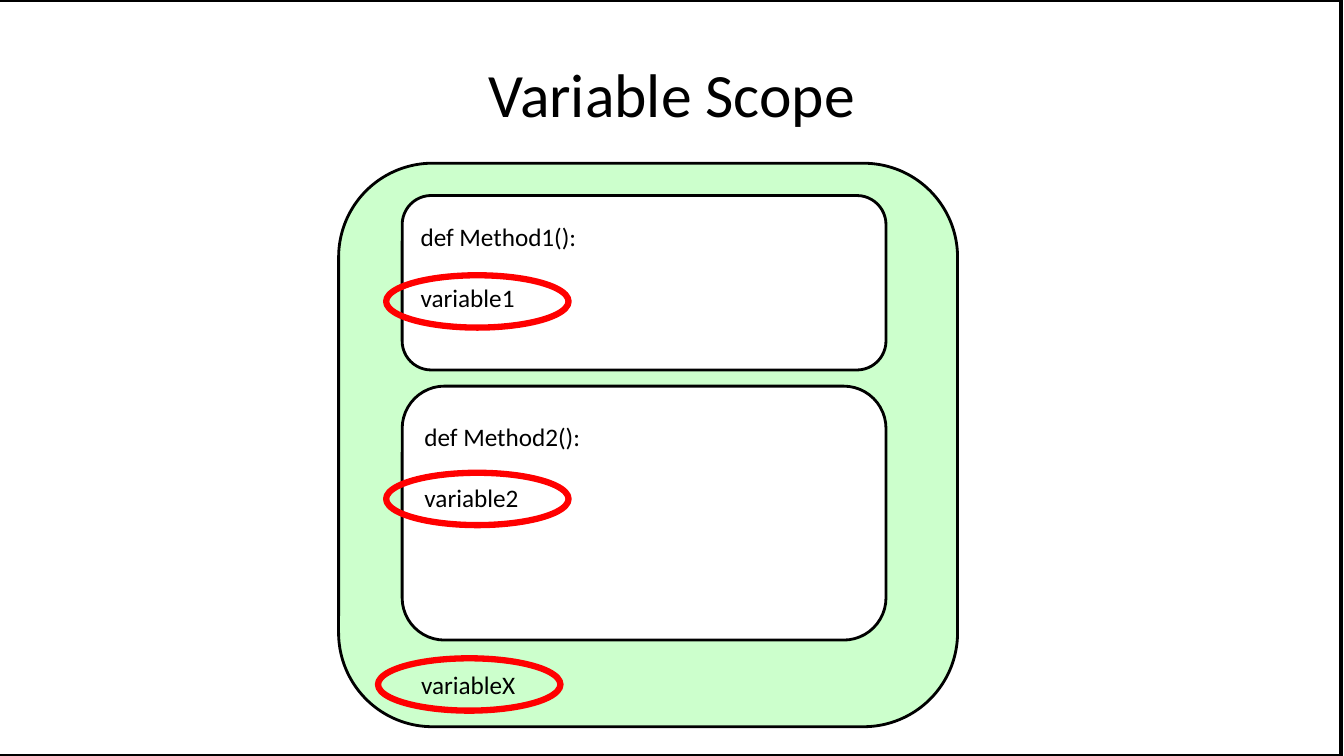
from pptx import Presentation
from pptx.dml.color import RGBColor
from pptx.enum.shapes import MSO_SHAPE
from pptx.enum.text import MSO_ANCHOR, PP_ALIGN
from pptx.util import Pt

RECT = MSO_SHAPE.RECTANGLE
ROUND = MSO_SHAPE.ROUNDED_RECTANGLE
OVAL = MSO_SHAPE.OVAL
TOP, MID, BOTTOM = MSO_ANCHOR.TOP, MSO_ANCHOR.MIDDLE, MSO_ANCHOR.BOTTOM
LEFT, CENTER = PP_ALIGN.LEFT, PP_ALIGN.CENTER
BLACK = RGBColor(0, 0, 0)
WHITE = RGBColor(255, 255, 255)
GREEN = RGBColor(204, 255, 204)
RED = RGBColor(255, 0, 0)


class Deck:
    """Holds the style and the current slide."""

    font = "Calibri"
    size = 18

    def __init__(self, wide, high):
        self.show = Presentation()
        self.show.slide_width, self.show.slide_height = Pt(wide), Pt(high)
        self.slide = self.show.slides.add_slide(self.show.slide_layouts[5])

    def style(self, item, values):
        for name, value in values.items():
            setattr(item, name, value)

    def label(self, shape, lines, size, align, frame):
        text = shape.text_frame
        text.text = "\n".join(lines)
        self.style(text, {"word_wrap": True, **frame})
        for par in text.paragraphs:
            par.alignment = align
            self.style(par.font, {"name": self.font, "size": Pt(size)})
            par.font.color.rgb = BLACK
        return text

    def title(self, words, box):
        shape = self.slide.shapes.title
        spots = map(Pt, box)
        self.style(shape, dict(zip(("left", "top", "width", "height"), spots)))
        self.label(shape, [words], 44, CENTER, {"vertical_anchor": MID})

    def shape(self, kind, box, line, width, fill=None):
        shape = self.slide.shapes.add_shape(kind, *map(Pt, box))
        shape.shadow.inherit = False
        if fill is None:
            shape.fill.background()
        else:
            shape.fill.solid()
            shape.fill.fore_color.rgb = fill
        shape.line.color.rgb = line
        shape.line.width = Pt(width)
        return shape

    def scope(self, box, fill, lines, frame):
        shape = self.shape(ROUND, box, BLACK, 2, fill)
        text = self.label(shape, lines, self.size, LEFT, frame)
        for par in text.paragraphs[1:]:
            par.space_before = Pt(22)

    def ring(self, left, top):
        self.shape(OVAL, (left, top, 130.3, 37.4), RED, 4.5)

    def save(self):
        self.show.save("out.pptx")


def main():
    deck = Deck(960, 540)
    deck.title("Variable Scope", (48, 21.6, 864, 90))
    deck.scope((241.9, 116.6, 442.1, 402.5), GREEN, ["variableX"],
               {"vertical_anchor": BOTTOM, "margin_left": Pt(39.2), "margin_bottom": 0})
    deck.shape(RECT, (-2.2, 0, 960, 540), BLACK, 3)
    methods = [(139.7, 124.6, 12.3), (275.8, 181.4, 16.3)]
    for num, (top, high, drop) in enumerate(methods, 1):
        deck.scope((287.3, top, 345.6, high), WHITE,
                   [f"def Method{num}():", f"variable{num}"],
                   {"vertical_anchor": TOP, "margin_top": Pt(drop)})
    for left, top in [(275.8, 196.6), (275.8, 337.7), (270, 470.2)]:
        deck.ring(left, top)
    deck.save()


if __name__ == "__main__":
    main()
